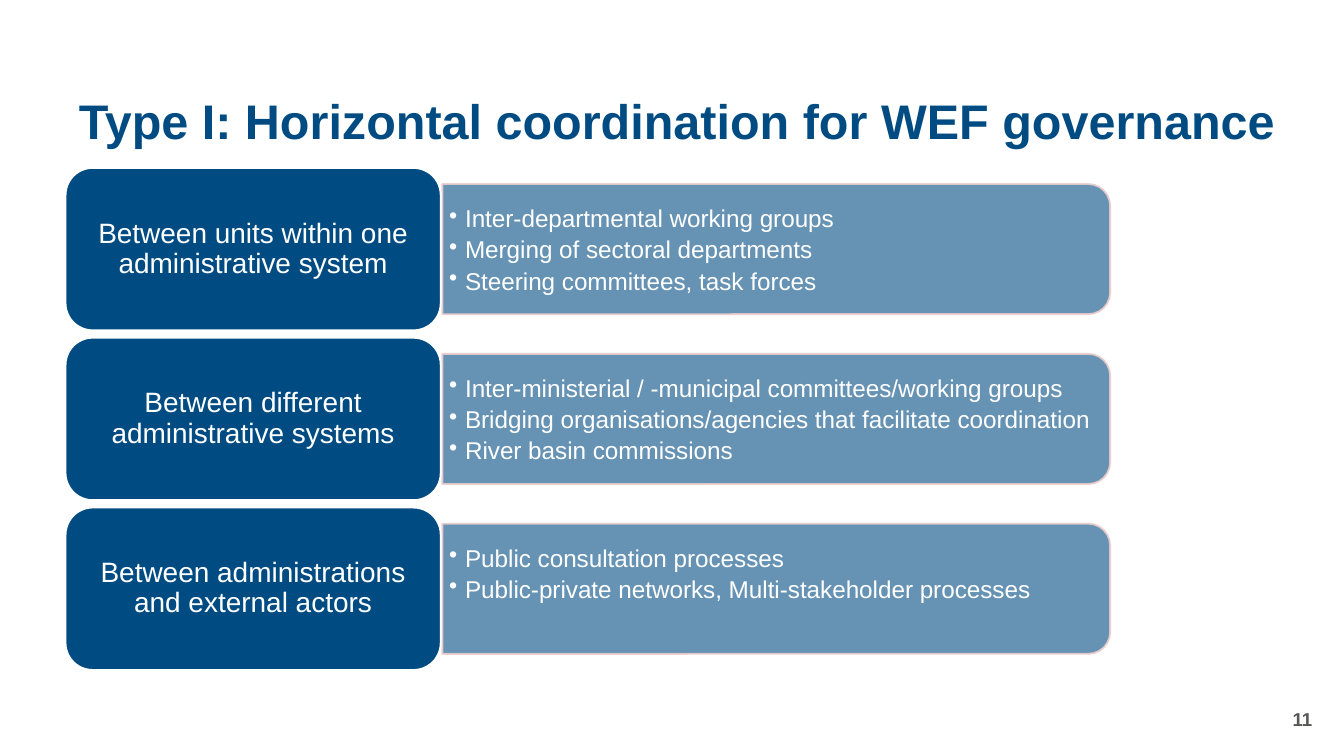
from lxml.etree import SubElement
from pptx import Presentation
from pptx.dml.color import RGBColor
from pptx.enum.shapes import MSO_SHAPE
from pptx.enum.text import MSO_ANCHOR, PP_ALIGN
from pptx.oxml.ns import qn
from pptx.util import Cm, Pt

COLOURS = {
    "navy": "004C82",
    "rose": "EBCCCC",
    "white": "FFFFFF",
    "grey": "575756",
}

FORMATS = {
    "title": {"size": Pt(26), "bold": True, "name": "Arial"},
    "number": {"size": Pt(10), "bold": True, "name": "Arial"},
    "label": {"size": Pt(15), "name": "Arial"},
    "detail": {"size": Pt(13), "name": "Arial"},
}

COORDINATION_TYPES = [
    ("Between units within one administrative system",
     ["Inter-departmental working groups",
      "Merging of sectoral departments",
      "Steering committees, task forces"]),
    ("Between different administrative systems",
     ["Inter-ministerial / -municipal committees/working groups",
      "Bridging organisations/agencies that facilitate coordination",
      "River basin commissions"]),
    ("Between administrations and external actors",
     ["Public consultation processes",
      "Public-private networks, Multi-stakeholder processes"]),
]

FIRST_CENTRE, ROW_PITCH = 4.71, 3.21
LABEL_LEFT, LABEL_WIDTH, LABEL_HEIGHT = 1.24, 7.09, 3.07
DETAIL_LEFT, DETAIL_WIDTH, DETAIL_HEIGHT = 8.36, 12.62, 2.46


def colour(name):
    return RGBColor.from_string(COLOURS[name])


def set_attributes(target, values):
    for name, value in values.items():
        setattr(target, name, value)


def set_opacity(fill_parent, percent):
    """Make the solid fill inside an XML element partly transparent."""
    for rgb in fill_parent.findall(f"{qn('a:solidFill')}/{qn('a:srgbClr')}"):
        SubElement(rgb, qn("a:alpha"), val=str(percent * 1000))


def add_bullet(paragraph):
    properties = paragraph._p.get_or_add_pPr()
    properties.set("marL", str(Cm(0.3)))
    properties.set("indent", str(-Cm(0.3)))
    SubElement(properties, qn("a:buChar"), char="•")


def write_paragraph(paragraph, text, style, colour_name, **layout):
    paragraph.text = text
    set_attributes(paragraph, layout)
    set_attributes(paragraph.font, FORMATS[style])
    paragraph.font.color.rgb = colour(colour_name)


def add_text_box(slide, left, top, width, height, **frame_values):
    box = slide.shapes.add_textbox(Cm(left), Cm(top), Cm(width), Cm(height))
    set_attributes(box.text_frame, {"word_wrap": True, **frame_values})
    return box.text_frame


def add_block(slide, kind, centre_x, centre_y, width, height, line):
    shape = slide.shapes.add_shape(
        kind, Cm(centre_x - width / 2), Cm(centre_y - height / 2), Cm(width), Cm(height))
    shape.shadow.inherit = False
    shape.fill.solid()
    shape.fill.fore_color.rgb = colour("navy")
    shape.line.color.rgb = colour(line)
    shape.line.width = Pt(1)
    return shape


def add_detail(slide, centre_y, items):
    # A quarter turn moves the two rounded corners to the right side.
    panel = add_block(slide, MSO_SHAPE.ROUND_2_SAME_RECTANGLE,
                      DETAIL_LEFT + DETAIL_WIDTH / 2, centre_y,
                      DETAIL_HEIGHT, DETAIL_WIDTH, "rose")
    panel.rotation = 90
    properties = panel.fill._xPr
    set_opacity(properties, 60)
    set_opacity(properties.find(qn("a:ln")), 90)

    frame = add_text_box(slide, DETAIL_LEFT, centre_y - 1.1, DETAIL_WIDTH - 0.12, 2.2,
                         vertical_anchor=MSO_ANCHOR.TOP, margin_left=Cm(0.13),
                         margin_right=Cm(0.13), margin_top=Cm(0.3), margin_bottom=Cm(0.08))
    for index, item in enumerate(items):
        paragraph = frame.add_paragraph() if index else frame.paragraphs[0]
        add_bullet(paragraph)
        write_paragraph(paragraph, item, "detail", "white",
                        line_spacing=0.9, space_after=Pt(2.6))


def add_label(slide, centre_y, text):
    label = add_block(slide, MSO_SHAPE.ROUNDED_RECTANGLE, LABEL_LEFT + LABEL_WIDTH / 2,
                      centre_y, LABEL_WIDTH, LABEL_HEIGHT, "white")
    set_attributes(label.text_frame, {
        "word_wrap": True, "vertical_anchor": MSO_ANCHOR.MIDDLE,
        "margin_left": Cm(0.15), "margin_right": Cm(0.15)})
    write_paragraph(label.text_frame.paragraphs[0], text, "label", "white",
                    alignment=PP_ALIGN.CENTER, line_spacing=0.9)


def main():
    presentation = Presentation()
    presentation.slide_width, presentation.slide_height = Cm(25.4), Cm(14.29)
    slide = presentation.slides.add_slide(presentation.slide_layouts[6])

    title = add_text_box(slide, 1.24, 1.6, 23.8, 1.5, vertical_anchor=MSO_ANCHOR.MIDDLE)
    write_paragraph(title.paragraphs[0], "Type I: Horizontal coordination for WEF governance",
                    "title", "navy", line_spacing=0.9)
    number = add_text_box(slide, 19.33, 13.21, 5.72, 0.76, vertical_anchor=MSO_ANCHOR.MIDDLE)
    write_paragraph(number.paragraphs[0], "11", "number", "grey", alignment=PP_ALIGN.RIGHT)

    for row, (label, items) in enumerate(COORDINATION_TYPES):
        centre_y = FIRST_CENTRE + row * ROW_PITCH
        add_detail(slide, centre_y, items)
        add_label(slide, centre_y, label)

    presentation.save("out.pptx")


if __name__ == "__main__":
    main()
